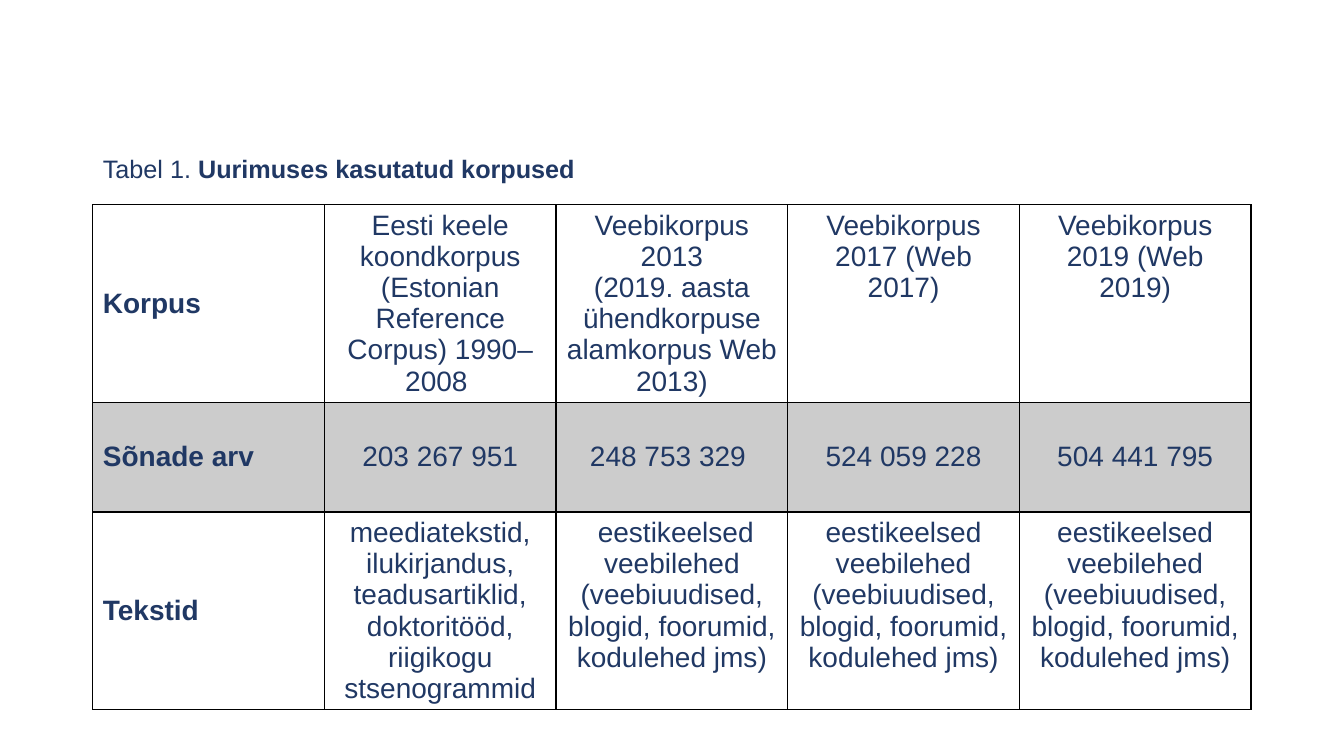
from dataclasses import dataclass

from pptx import Presentation
from pptx.dml.color import RGBColor
from pptx.enum.text import MSO_ANCHOR, MSO_AUTO_SIZE, PP_ALIGN
from pptx.oxml import parse_xml
from pptx.oxml.ns import nsdecls, qn
from pptx.util import Inches, Pt

LEFT, CENTER = PP_ALIGN.LEFT, PP_ALIGN.CENTER
TOP, MIDDLE = MSO_ANCHOR.TOP, MSO_ANCHOR.MIDDLE
NO_FIT = MSO_AUTO_SIZE.NONE


@dataclass(frozen=True)
class Theme:
    font: str = "Arial"
    ink: str = "203864"
    line: str = "000000"
    shade: str = "000000"
    alpha: int = 20
    title: int = 18
    body: int = 20
    border: int = 1


THEME = Theme()
WIDE, HIGH = Inches(13.33), Inches(7.5)
MARGIN = Inches(0.92)
SPAN = WIDE - 2 * MARGIN
TITLE_BOX = (MARGIN, Inches(1.47), SPAN, Inches(0.4))
TABLE_BOX = (MARGIN, Inches(2.03), SPAN, Inches(4.5))
SHARES = (1.56, 1.09, 1.85)

CAPTION = (("Tabel 1. ", False), ("Uurimuses kasutatud korpused", True))
WEB = "eestikeelsed veebilehed (veebiuudised, blogid, foorumid, kodulehed jms)"
ROWS = (
    ("Korpus",
     "Eesti keele koondkorpus\n(Estonian Reference Corpus) 1990–2008 ",
     "Veebikorpus 2013\n(2019. aasta ühendkorpuse alamkorpus Web 2013)",
     "Veebikorpus 2017 (Web 2017)",
     "Veebikorpus 2019 (Web 2019)"),
    ("Sõnade arv", "203 267 951", "248 753 329 ", "524 059 228", "504 441 795"),
    ("Tekstid",
     "meediatekstid,\nilukirjandus, teadusartiklid, doktoritööd, riigikogu stsenogrammid",
     " " + WEB, WEB, WEB),
)
SHADED = 1
TOP_CELLS = {(0, 1), (0, 2), (0, 3), (0, 4), (2, 2), (2, 3), (2, 4)}


def apply(item, values):
    for name, value in values.items():
        setattr(item, name, value)


def add_run(para, text, size, bold):
    run = para.add_run()
    run.text = text
    apply(run.font, {"name": THEME.font, "size": Pt(size), "bold": bold})
    run.font.color.rgb = RGBColor.from_string(THEME.ink)


def add_title(slide, box):
    title = slide.shapes.title
    apply(title, dict(zip(("left", "top", "width", "height"), box)))
    frame = title.text_frame
    apply(frame, {"word_wrap": True, "auto_size": NO_FIT, "vertical_anchor": TOP})
    para = frame.paragraphs[0]
    apply(para, {"alignment": LEFT, "line_spacing": 1.0, "space_before": Pt(0)})
    for text, bold in CAPTION:
        add_run(para, text, THEME.title, bold)


def paint(cell, shaded):
    props = cell._tc.get_or_add_tcPr()
    if shaded:
        cell.fill.solid()
        cell.fill.fore_color.rgb = RGBColor.from_string(THEME.shade)
        color = props.find(".//" + qn("a:srgbClr"))
        color.append(parse_xml(f'<a:alpha {nsdecls("a")} val="{THEME.alpha * 1000}"/>'))
    else:
        cell.fill.background()
    for order, side in enumerate("LRTB"):
        props.insert(order, parse_xml(
            f'<a:ln{side} {nsdecls("a")} w="{Pt(THEME.border)}"><a:solidFill>'
            f'<a:srgbClr val="{THEME.line}"/></a:solidFill></a:ln{side}>'))


def fill_cell(cell, text, head):
    frame = cell.text_frame
    for index, line in enumerate(text.split("\n")):
        para = frame.add_paragraph() if index else frame.paragraphs[0]
        para.alignment = LEFT if head else CENTER
        add_run(para, line, THEME.body, head)


def add_table(slide, box):
    wide, high = box[2:]
    count = len(ROWS[0])
    table = slide.shapes.add_table(len(ROWS), count, *box).table
    apply(table, {"first_row": False, "horz_banding": False})
    for col in table.columns:
        col.width = wide // count
    for row, share in zip(table.rows, SHARES):
        row.height = int(high * share / sum(SHARES))
    for r, texts in enumerate(ROWS):
        for c, text in enumerate(texts):
            cell = table.cell(r, c)
            cell.vertical_anchor = TOP if (r, c) in TOP_CELLS else MIDDLE
            fill_cell(cell, text, c == 0)
            paint(cell, r == SHADED)


def main():
    deck = Presentation()
    apply(deck, {"slide_width": WIDE, "slide_height": HIGH})
    slide = deck.slides.add_slide(deck.slide_layouts[5])
    add_table(slide, TABLE_BOX)
    add_title(slide, TITLE_BOX)
    deck.save("out.pptx")


if __name__ == "__main__":
    main()
